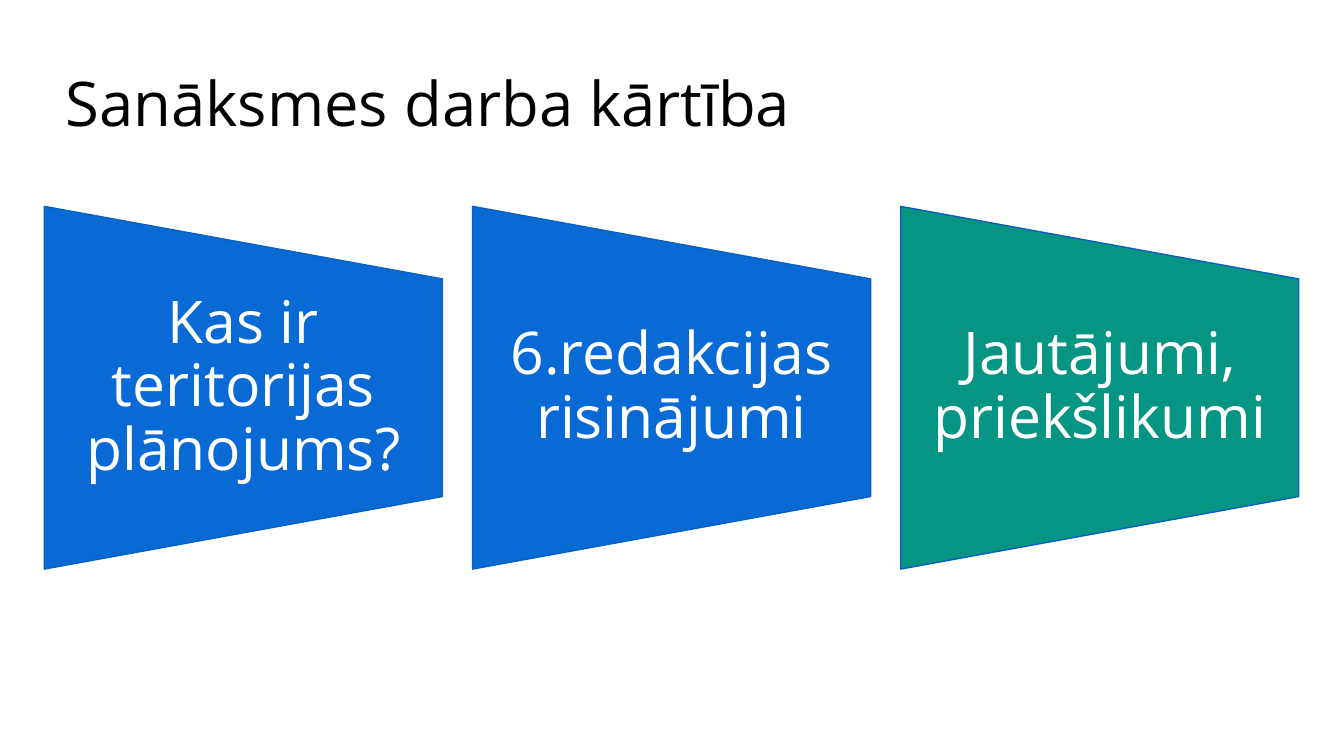
import dataclasses

import pptx
import pptx.dml.color
import pptx.enum.shapes
import pptx.enum.text
import pptx.util
from pptx.util import Cm

FONT = "Open Sans"
WHITE = "FFFFFF"
BLUE = "096AD5"
GREEN = "069483"
EDGE = "0860C1"

LEFT, MID, STEP = 1.12, 9.77, 10.79
LONG, SHORT, TALL = 10.03, 9.14, 5.49


@dataclasses.dataclass
class Topic:
    text: str
    fill: str


TOPICS = [
    Topic("Kas ir teritorijas plānojums?", BLUE),
    Topic("6.redakcijas risinājumi", BLUE),
    Topic("Jautājumi, priekšlikumi", GREEN),
]


def paint(target, color: str) -> None:
    """Set the colour of a font or a line, or a solid fill."""
    if hasattr(target, "solid"):
        target.solid()
        target = target.fore_color
    else:
        target = target.color
    target.rgb = pptx.dml.color.RGBColor.from_string(color)


def write(shape, text: str, *, size: float, color: str,
          align: pptx.enum.text.PP_ALIGN, side: float = 0.25,
          edge: float = 0.13) -> None:
    """Fill a shape with one paragraph, centred in height."""
    frame = shape.text_frame
    frame.word_wrap = True
    frame.auto_size = pptx.enum.text.MSO_AUTO_SIZE.NONE
    frame.vertical_anchor = pptx.enum.text.MSO_ANCHOR.MIDDLE
    frame.margin_left = frame.margin_right = Cm(side)
    frame.margin_top = frame.margin_bottom = Cm(edge)
    para = frame.paragraphs[0]
    para.alignment = align
    para.line_spacing = 0.9
    run = para.add_run()
    run.text = text
    run.font.name = FONT
    run.font.size = pptx.util.Pt(size)
    paint(run.font, color)


def draw_topic(slide, topic: Topic, left: float) -> None:
    kind = pptx.enum.shapes.MSO_SHAPE.FLOWCHART_MANUAL_OPERATION
    # The turned shape keeps the centre of its unturned frame.
    panel = slide.shapes.add_shape(
        kind, Cm(left + (LONG - SHORT) / 2), Cm(MID - LONG / 2),
        Cm(SHORT), Cm(LONG))
    panel.rotation = 270
    panel.shadow.inherit = False
    paint(panel.fill, topic.fill)
    paint(panel.line, EDGE)
    panel.line.width = pptx.util.Pt(1)

    label = slide.shapes.add_textbox(
        Cm(left), Cm(MID - TALL / 2), Cm(LONG), Cm(TALL))
    write(label, topic.text, size=42, color=WHITE, side=0.73, edge=0,
          align=pptx.enum.text.PP_ALIGN.CENTER)


def main() -> None:
    deck = pptx.Presentation()
    deck.slide_width, deck.slide_height = Cm(33.87), Cm(19.05)
    slide = deck.slides.add_slide(deck.slide_layouts.get_by_name("Title Only"))
    paint(slide.background.fill, WHITE)

    title = slide.shapes.title
    title.left, title.top = Cm(1.4), Cm(0.84)
    title.width, title.height = Cm(29.21), Cm(3.68)
    write(title, "Sanāksmes darba kārtība", size=44, color="000000",
          align=pptx.enum.text.PP_ALIGN.LEFT)

    for i, topic in enumerate(TOPICS):
        draw_topic(slide, topic, LEFT + i * STEP)
    deck.save("out.pptx")


if __name__ == "__main__":
    main()
